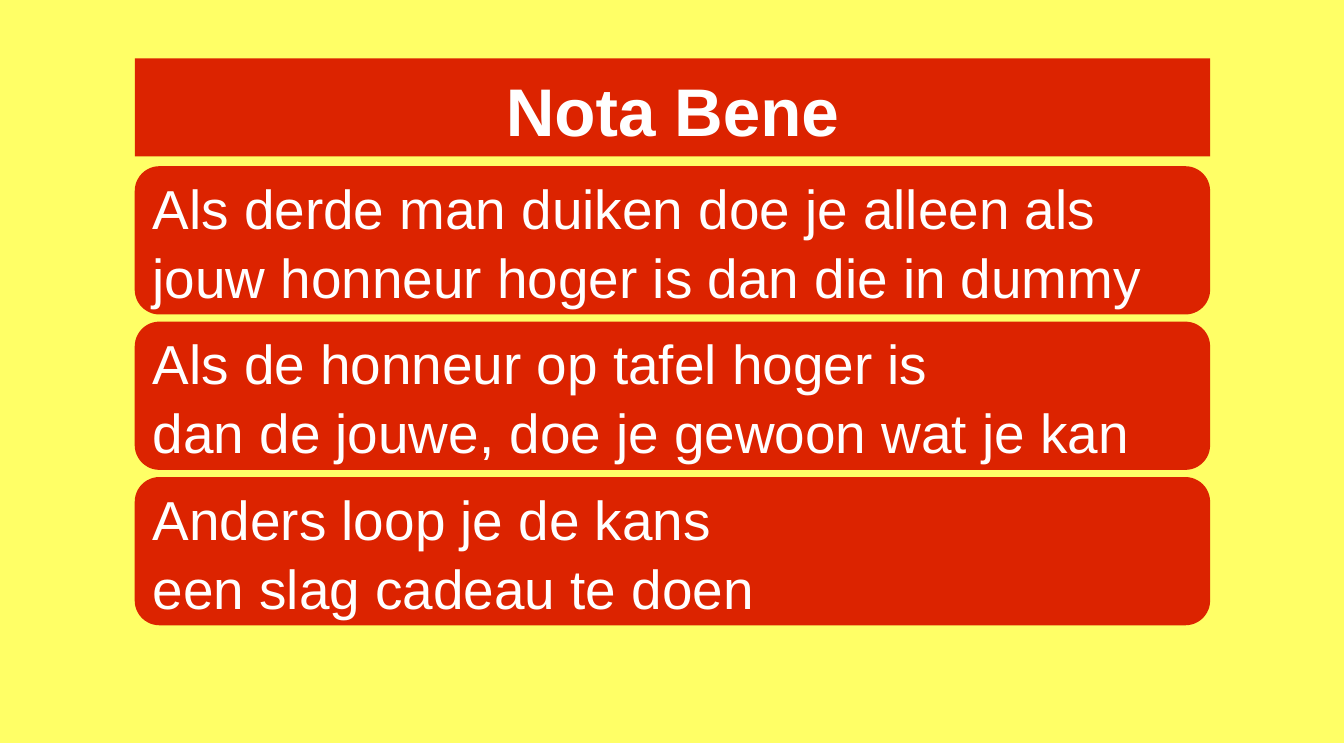
"""Build the "Nota Bene" slide: a title bar above three rounded advice panels."""
from lxml import etree
from pptx import Presentation
from pptx.dml.color import RGBColor
from pptx.enum.shapes import MSO_SHAPE
from pptx.enum.text import MSO_ANCHOR, MSO_AUTO_SIZE, PP_ALIGN
from pptx.oxml.ns import qn
from pptx.util import Inches, Pt

ROUNDED = MSO_SHAPE.ROUNDED_RECTANGLE
MIDDLE = MSO_ANCHOR.MIDDLE
NO_AUTOFIT = MSO_AUTO_SIZE.NONE
LEFT, CENTER = PP_ALIGN.LEFT, PP_ALIGN.CENTER

TITLE = "Nota Bene"
ADVICE = [
    ["Als derde man duiken doe je alleen als jouw honneur hoger is dan die in dummy"],
    ["Als de honneur op tafel hoger is", "dan de jouwe, doe je gewoon wat je kan"],
    ["Anders loop je de kans", "een slag cadeau te doen"],
]
COLORS = {"background": "FFFF66", "panel": "DC2300", "text": "FFFFFF"}

SLIDE_WIDTH, SLIDE_HEIGHT = 14.96, 8.27
PANEL_LEFT, PANEL_WIDTH = 1.5, 11.97
TITLE_TOP, TITLE_HEIGHT = 0.65, 1.09
ADVICE_TOP, ADVICE_HEIGHT, ADVICE_PITCH = 1.85, 1.65, 1.73
LINE_SPACING = 1.05


def color(name):
    return RGBColor.from_string(COLORS[name])


def format_panel(shape, lines, size, alignment, bold=False):
    shape.fill.solid()
    shape.fill.fore_color.rgb = color("panel")
    shape.line.fill.background()
    frame = shape.text_frame
    frame.text = "\n".join(lines)
    frame.auto_size = NO_AUTOFIT
    frame.word_wrap = True
    frame.vertical_anchor = MIDDLE
    frame.margin_left = frame.margin_right = Inches(0.12)
    frame.margin_top = frame.margin_bottom = Inches(0.06)
    for paragraph in frame.paragraphs:
        paragraph.alignment = alignment
        paragraph.line_spacing = LINE_SPACING
        paragraph.font.name = "Arial"
        paragraph.font.size = Pt(size)
        paragraph.font.bold = bold
        paragraph.font.color.rgb = color("text")


def add_title(slide):
    title = slide.shapes.title
    title.left, title.top = Inches(PANEL_LEFT), Inches(TITLE_TOP)
    title.width, title.height = Inches(PANEL_WIDTH), Inches(TITLE_HEIGHT)
    geometry = etree.SubElement(title.element.spPr, qn("a:prstGeom"), prst="roundRect")
    etree.SubElement(geometry, qn("a:avLst"))
    format_panel(title, [TITLE], 54, CENTER, bold=True)


def add_advice(slide):
    for index, lines in enumerate(ADVICE):
        panel = slide.shapes.add_shape(
            ROUNDED,
            Inches(PANEL_LEFT),
            Inches(ADVICE_TOP + index * ADVICE_PITCH),
            Inches(PANEL_WIDTH),
            Inches(ADVICE_HEIGHT),
        )
        panel.shadow.inherit = False
        format_panel(panel, lines, 44, LEFT)


def main():
    presentation = Presentation()
    presentation.slide_width = Inches(SLIDE_WIDTH)
    presentation.slide_height = Inches(SLIDE_HEIGHT)
    slide = presentation.slides.add_slide(presentation.slide_layouts[5])
    slide.background.fill.solid()
    slide.background.fill.fore_color.rgb = color("background")
    add_title(slide)
    add_advice(slide)
    presentation.save("out.pptx")


if __name__ == "__main__":
    main()
